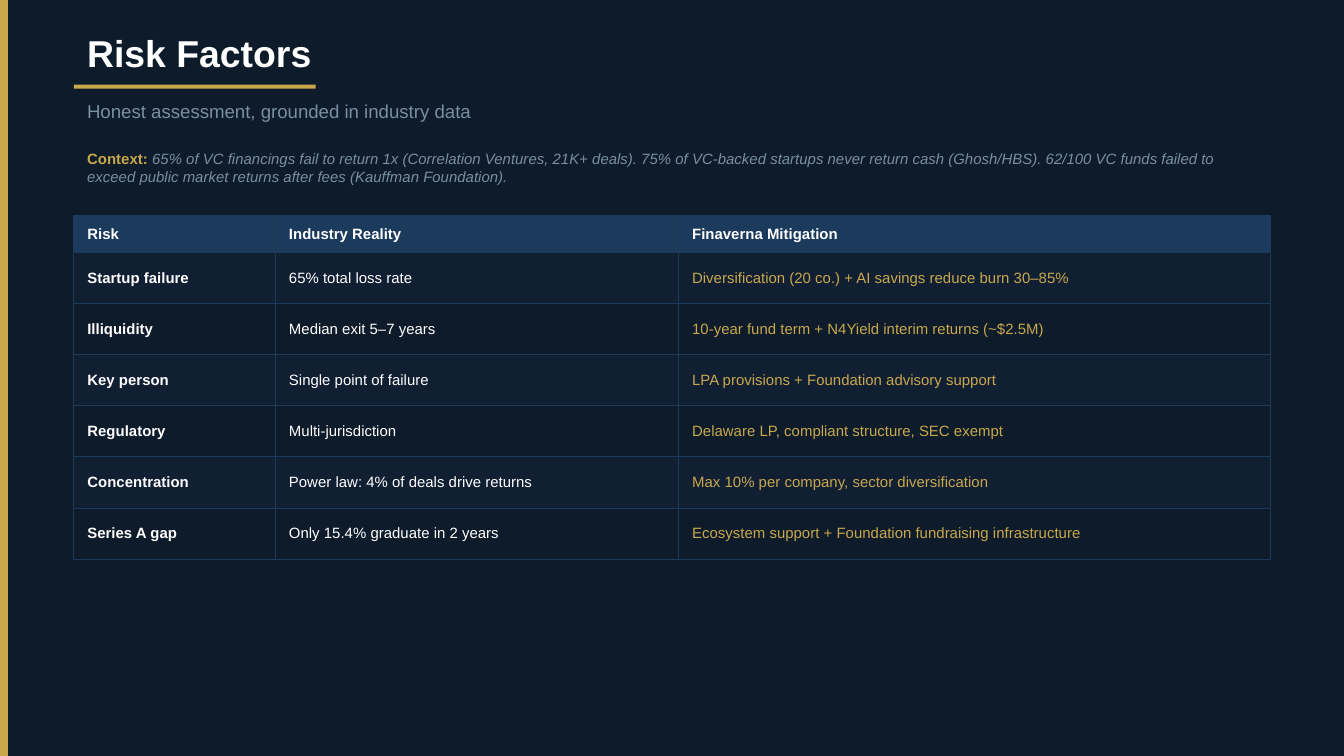
import pptx
import pptx.util
import pptx.dml.color
import pptx.enum.shapes
import pptx.enum.text
import pptx.oxml
import pptx.oxml.ns

Inches = pptx.util.Inches
Pt = pptx.util.Pt
RGBColor = pptx.dml.color.RGBColor
MIDDLE = pptx.enum.text.MSO_ANCHOR.MIDDLE

NAVY = RGBColor(0x0D, 0x1B, 0x2A)
BAND = RGBColor(0x11, 0x1F, 0x33)
HEAD = RGBColor(0x1B, 0x3A, 0x5C)
EDGE = RGBColor(0x1E, 0x3A, 0x5A)
GOLD = RGBColor(0xC9, 0xA8, 0x4C)
GREY = RGBColor(0x7A, 0x8F, 0xA3)
WHITE = RGBColor(0xFF, 0xFF, 0xFF)

WIDTH = 10
HEIGHT = WIDTH * 9 / 16
LEFT, SPAN = 0.55, 8.9

BARS = [(0, 0, 0.06, HEIGHT), (LEFT, 0.63, 1.8, 0.03)]
TEXTS = [
    (0.18, 0.42, [("Risk Factors", 20, WHITE, True, False)]),
    (0.7, 0.25, [("Honest assessment, grounded in industry data", 10, GREY, False, False)]),
    (1, 0.5, [
        ("Context: ", 8, GOLD, True, False),
        ("65% of VC financings fail to return 1x (Correlation Ventures, 21K+ deals). "
         "75% of VC-backed startups never return cash (Ghosh/HBS). "
         "62/100 VC funds failed to exceed public market returns after fees "
         "(Kauffman Foundation).", 8, GREY, False, True),
    ]),
]
RISKS = [
    ("Risk", "Industry Reality", "Finaverna Mitigation"),
    ("Startup failure", "65% total loss rate",
     "Diversification (20 co.) + AI savings reduce burn 30–85%"),
    ("Illiquidity", "Median exit 5–7 years",
     "10-year fund term + N4Yield interim returns (~$2.5M)"),
    ("Key person", "Single point of failure",
     "LPA provisions + Foundation advisory support"),
    ("Regulatory", "Multi-jurisdiction",
     "Delaware LP, compliant structure, SEC exempt"),
    ("Concentration", "Power law: 4% of deals drive returns",
     "Max 10% per company, sector diversification"),
    ("Series A gap", "Only 15.4% graduate in 2 years",
     "Ecosystem support + Foundation fundraising infrastructure"),
]
COLS = [1.5, 3, 4.4]
ROWS = [0.28] + [0.38] * (len(RISKS) - 1)
INKS = [WHITE, WHITE, GOLD]


def style(run, size, color, bold, italic=False):
    font = run.font
    font.name = "Arial"
    font.size = Pt(size)
    font.color.rgb = color
    font.bold = bold
    font.italic = italic


def add_bar(slide, box):
    bar = slide.shapes.add_shape(
        pptx.enum.shapes.MSO_SHAPE.RECTANGLE, *map(Inches, box))
    bar.shadow.inherit = False
    bar.fill.solid()
    bar.fill.fore_color.rgb = GOLD
    bar.line.fill.background()


def add_text(slide, top, height, parts):
    box = slide.shapes.add_textbox(*map(Inches, (LEFT, top, SPAN, height)))
    frame = box.text_frame
    frame.word_wrap = True
    frame.vertical_anchor = MIDDLE
    for text, *look in parts:
        run = frame.paragraphs[0].add_run()
        run.text = text
        style(run, *look)


def add_edges(cell):
    props = cell._tc.get_or_add_tcPr()
    for i, side in enumerate(("lnL", "lnR", "lnT", "lnB")):
        props.insert(i, pptx.oxml.parse_xml(
            f'<a:{side} {pptx.oxml.ns.nsdecls("a")} w="{Pt(0.5)}">'
            f'<a:solidFill><a:srgbClr val="{EDGE}"/></a:solidFill></a:{side}>'))


def add_risks(slide):
    box = map(Inches, (LEFT, 1.6, SPAN, sum(ROWS)))
    table = slide.shapes.add_table(len(ROWS), len(COLS), *box).table
    for col, width in zip(table.columns, COLS):
        col.width = Inches(width)
    for row, height in zip(table.rows, ROWS):
        row.height = Inches(height)
    for r, line in enumerate(RISKS):
        for c, text in enumerate(line):
            cell = table.cell(r, c)
            cell.text_frame.text = text
            cell.vertical_anchor = MIDDLE
            cell.fill.solid()
            cell.fill.fore_color.rgb = HEAD if r == 0 else (NAVY, BAND)[r % 2]
            ink = WHITE if r == 0 else INKS[c]
            style(cell.text_frame.paragraphs[0].runs[0], 8, ink, r == 0 or c == 0)
            add_edges(cell)


def main():
    deck = pptx.Presentation()
    deck.slide_width = Inches(WIDTH)
    deck.slide_height = Inches(HEIGHT)
    slide = deck.slides.add_slide(deck.slide_layouts[6])
    slide.background.fill.solid()
    slide.background.fill.fore_color.rgb = NAVY
    for box in BARS:
        add_bar(slide, box)
    for item in TEXTS:
        add_text(slide, *item)
    add_risks(slide)
    deck.save("out.pptx")


if __name__ == "__main__":
    main()
